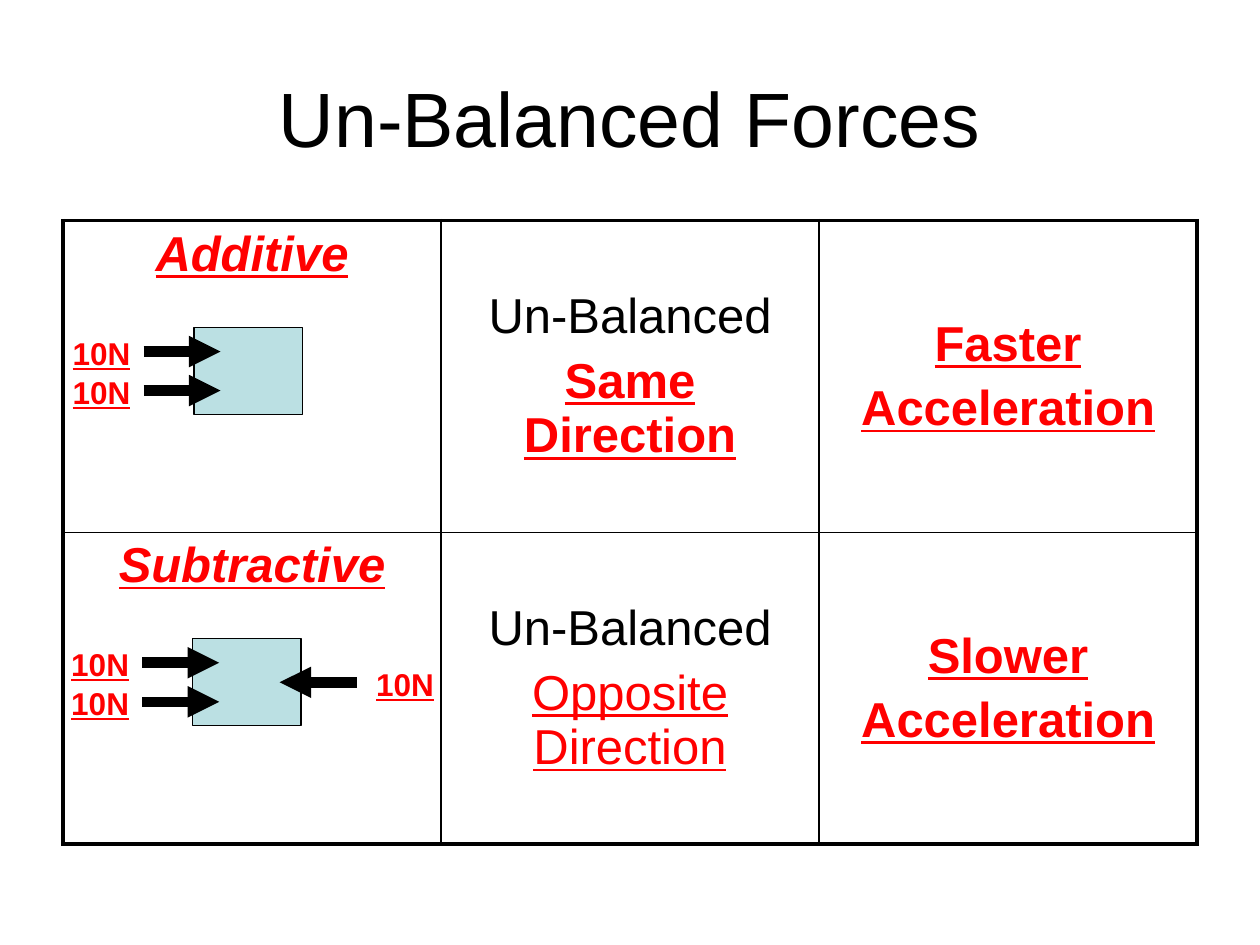
from lxml.etree import SubElement
from pptx import Presentation
from pptx.dml.color import RGBColor
from pptx.enum.shapes import MSO_CONNECTOR, MSO_SHAPE
from pptx.enum.text import MSO_ANCHOR, PP_ALIGN
from pptx.oxml import parse_xml
from pptx.oxml.ns import nsdecls, qn
from pptx.util import Inches, Pt

COLORS = {"ink": "000000", "answer": "FF0000", "block": "BBE0E3"}
ANSWER = {"color": "answer", "bold": True, "underline": True}
HEADING = {**ANSWER, "italic": True}
OUTER, INNER = 2.25, 1

ROWS = [
    [
        [("Additive", HEADING)],
        [("Un-Balanced", {}), ("Same Direction", ANSWER)],
        [("Faster", ANSWER), ("Acceleration", ANSWER)],
    ],
    [
        [("Subtractive", HEADING)],
        [("Un-Balanced", {}), ("Opposite Direction", {**ANSWER, "bold": False})],
        [("Slower", ANSWER), ("Acceleration", ANSWER)],
    ],
]


def rgb(name):
    """Return the named colour."""
    return RGBColor.from_string(COLORS[name])


def write(paragraph, text, size=28, color="ink", bold=False, italic=False,
          underline=False, before=0):
    """Write one centred, formatted run into a paragraph."""
    paragraph.alignment = PP_ALIGN.CENTER
    paragraph.space_before = Pt(before)
    run = paragraph.add_run()
    run.text = text
    font = run.font
    font.name, font.size = "Arial", Pt(size)
    font.bold, font.italic, font.underline = bold, italic, underline
    font.color.rgb = rgb(color)


def add_label(slide, left, top, width, height, text, wrap=False, **style):
    """Add a text box holding one vertically centred line."""
    label = slide.shapes.add_textbox(
        Inches(left), Inches(top), Inches(width), Inches(height))
    label.text_frame.word_wrap = wrap
    label.text_frame.vertical_anchor = MSO_ANCHOR.MIDDLE
    write(label.text_frame.paragraphs[0], text, **style)


def set_borders(cell, widths):
    """Draw the left, right, top and bottom borders of a cell."""
    properties = cell._tc.get_or_add_tcPr()
    for index, (side, width) in enumerate(zip("LRTB", widths)):
        properties.insert(index, parse_xml(
            f'<a:ln{side} {nsdecls("a")} w="{Pt(width)}"><a:solidFill>'
            f'<a:srgbClr val="{COLORS["ink"]}"/></a:solidFill></a:ln{side}>'))


def add_forces_table(slide, left, top, width, height):
    """Add the table of force types, directions and accelerations."""
    row_count, column_count = len(ROWS), len(ROWS[0])
    table = slide.shapes.add_table(
        row_count, column_count, Inches(left), Inches(top),
        Inches(width), Inches(height)).table
    table.first_row = table.horz_banding = False
    for r, row in enumerate(ROWS):
        for c, lines in enumerate(row):
            cell = table.cell(r, c)
            cell.fill.background()
            cell.vertical_anchor = MSO_ANCHOR.MIDDLE if c else MSO_ANCHOR.TOP
            edges = (c == 0, c == column_count - 1, r == 0, r == row_count - 1)
            set_borders(cell, [OUTER if edge else INNER for edge in edges])
            for i, (text, style) in enumerate(lines):
                frame = cell.text_frame
                paragraph = frame.add_paragraph() if i else frame.paragraphs[0]
                write(paragraph, text, before=5.6 if i else 0, **style)


def add_force(slide, start, end, y, label_left):
    """Add a horizontal force arrow with its 10N label."""
    arrow = slide.shapes.add_connector(
        MSO_CONNECTOR.STRAIGHT, Inches(start), Inches(y), Inches(end), Inches(y))
    arrow.line.color.rgb = rgb("ink")
    arrow.line.width = Pt(6)
    SubElement(arrow.line._get_or_add_ln(), qn("a:tailEnd"), type="triangle")
    SubElement(arrow._element.spPr, qn("a:effectLst"))
    add_label(slide, label_left, y - 0.19, 0.67, 0.4, "10N", size=18, **ANSWER)


def add_force_diagram(slide, left, top, width, height, opposed=False):
    """Add a block pushed by two forces and optionally opposed by a third."""
    block = slide.shapes.add_shape(
        MSO_SHAPE.RECTANGLE, Inches(left), Inches(top),
        Inches(width), Inches(height))
    block.shadow.inherit = False
    block.fill.solid()
    block.fill.fore_color.rgb = rgb("block")
    block.line.color.rgb = rgb("ink")
    block.line.width = Pt(0.75)
    for offset in (0.19, 0.5):
        add_force(slide, left - 0.4, left + 0.21, top + offset, left - 1.07)
    if opposed:
        right = left + width
        add_force(slide, right + 0.44, right - 0.17, top + height / 2, right + 0.49)


def main():
    """Build and save the slide."""
    deck = Presentation()
    deck.slide_width, deck.slide_height = Inches(10), Inches(7.5)
    slide = deck.slides.add_slide(deck.slide_layouts[6])
    add_label(slide, 0.5, 0.3, 9, 1.25, "Un-Balanced Forces", wrap=True, size=44)
    add_forces_table(slide, 0.5, 1.75, 9, 4.95)
    add_force_diagram(slide, 1.54, 2.6, 0.86, 0.69)
    add_force_diagram(slide, 1.53, 5.07, 0.86, 0.69, opposed=True)
    deck.save("out.pptx")


if __name__ == "__main__":
    main()
